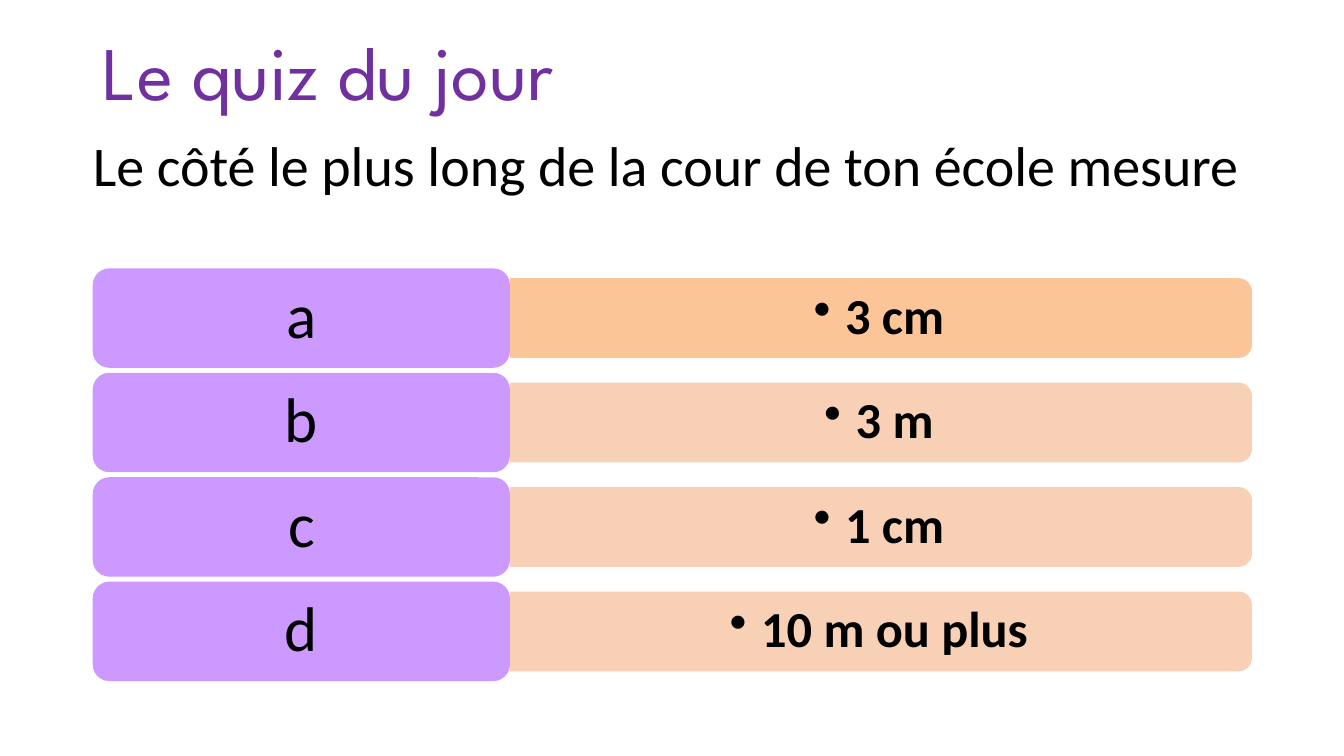
from lxml import etree
from pptx import Presentation
from pptx.dml.color import RGBColor
from pptx.enum.shapes import MSO_SHAPE
from pptx.enum.text import MSO_ANCHOR, PP_ALIGN
from pptx.oxml.ns import qn
from pptx.util import Pt

ROUND = MSO_SHAPE.ROUNDED_RECTANGLE
TAB = MSO_SHAPE.ROUND_2_SAME_RECTANGLE
LEFT, MID = PP_ALIGN.LEFT, PP_ALIGN.CENTER

TITLE = "Le quiz du jour"
ASK = "Le côté le plus long de la cour de ton école mesure "
LILAC, PEACH, ORANGE = "CC99FF", "F8CBAD", "FBBF8D"
ROWS = [
    ("a", "3 cm", ORANGE),
    ("b", "3 m", PEACH),
    ("c", "1 cm", PEACH),
    ("d", "10 m ou plus", PEACH),
]

# Answer rows, in points
X, Y, STEP = 66.24, 191.7, 74.6
KEY_W, KEY_H = 298, 71
BAR_W, BAR_H = 530, 57
HANG = 22.5

TITLE_FONT = {"name": "League Spartan", "size": Pt(54)}
ASK_FONT = {"name": "Calibri", "size": Pt(40)}
KEY_FONT = {"name": "Calibri", "size": Pt(45)}
BAR_FONT = {"name": "Calibri", "size": Pt(36), "bold": True}


def paint(target, color):
    target.rgb = RGBColor.from_string(color)


def block(kind, box, color):
    shape = slide.shapes.add_shape(kind, *map(Pt, box))
    shape.shadow.inherit = False
    shape.fill.solid()
    paint(shape.fill.fore_color, color)
    shape.line.fill.background()
    return shape


def write(shape, text, font, color="000000", align=MID, space=0.9, pad=(7.2, 3.6)):
    frame = shape.text_frame
    frame.word_wrap = True
    frame.vertical_anchor = MSO_ANCHOR.MIDDLE
    frame.margin_left = frame.margin_right = Pt(pad[0])
    frame.margin_top = frame.margin_bottom = Pt(pad[1])
    para = frame.paragraphs[0]
    para.alignment, para.line_spacing = align, space
    run = para.add_run()
    run.text = text
    for name, value in font.items():
        setattr(run.font, name, value)
    paint(run.font.color, color)
    return para


def label(box, *args, **kw):
    return write(slide.shapes.add_textbox(*map(Pt, box)), *args, **kw)


def bullet(para):
    props = para._p.get_or_add_pPr()
    props.set("marL", str(Pt(HANG)))
    props.set("indent", str(-Pt(HANG)))
    etree.SubElement(props, qn("a:buChar")).set("char", "•")


def fade(shape, share):
    """Set the opacity of a solid fill, in percent."""
    tint = shape.fill._xPr.find(qn("a:solidFill"))[0]
    etree.SubElement(tint, qn("a:alpha")).set("val", str(share * 1000))


def answer(row, key, text, color):
    top = Y + row * STEP
    mid = top + KEY_H / 2
    start = X + KEY_W
    # The tab is drawn upright, then turned so its round end faces right
    bar = block(TAB, (start + (BAR_W - BAR_H) / 2, mid - BAR_W / 2, BAR_H, BAR_W), color)
    bar.rotation = 90
    fade(bar, 90)
    bullet(label((start, mid - 25.5, BAR_W - 3, 51), text, BAR_FONT, pad=(10.8, 5.4)))
    write(block(ROUND, (X, top, KEY_W, KEY_H), LILAC), key, KEY_FONT, pad=(13.5, 6.75))


deck = Presentation()
deck.slide_width, deck.slide_height = Pt(960), Pt(540)
slide = deck.slides.add_slide(deck.slide_layouts[6])

label((66.24, 19.5, 828, 70), TITLE, TITLE_FONT, "7030A0", LEFT)
for row, item in enumerate(ROWS):
    answer(row, *item)
label((34.5, 89.3, 891, 55.5), ASK, ASK_FONT, space=1.0)

deck.save("out.pptx")
